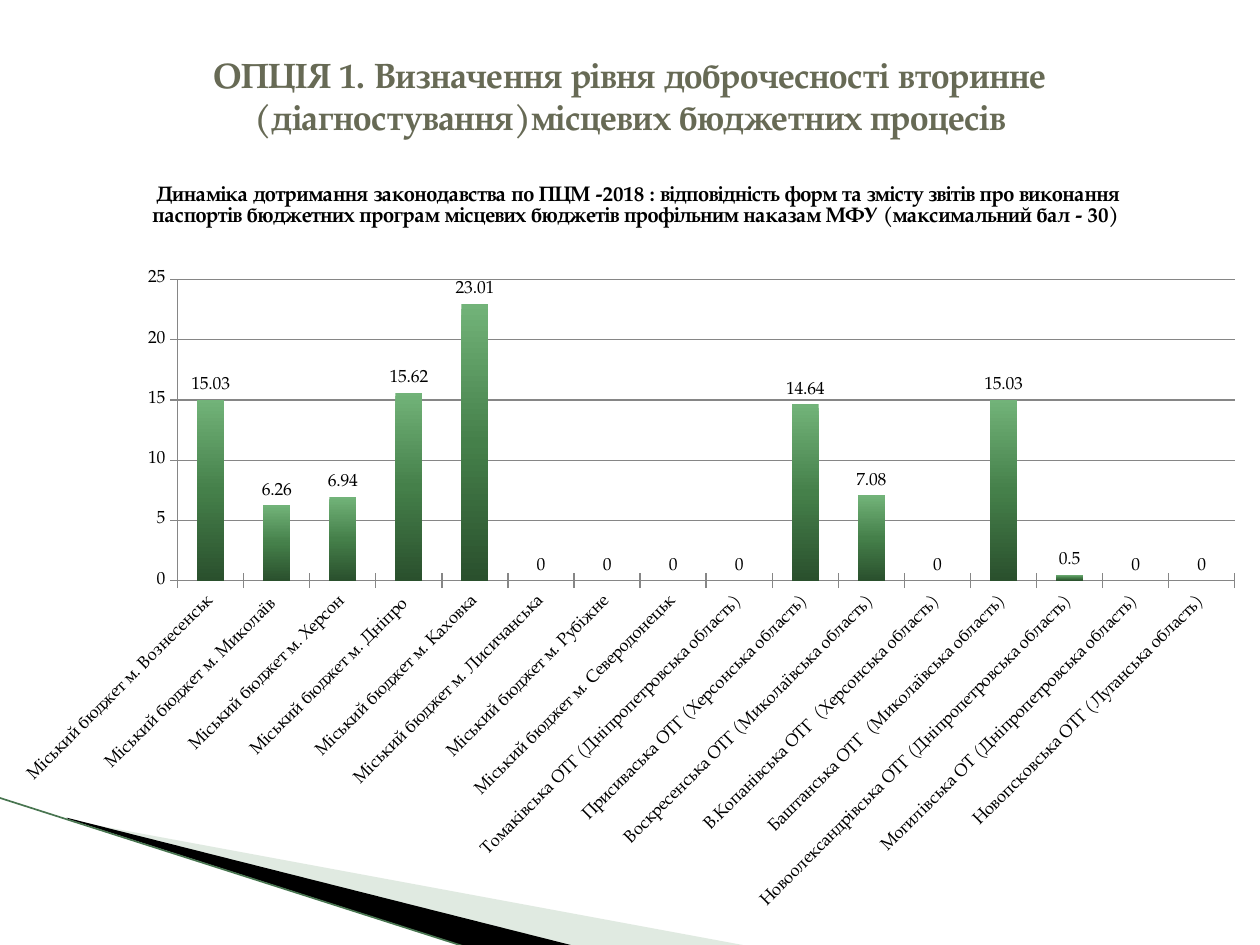
import pptx
import pptx.chart.data
import pptx.dml.color
import pptx.enum.chart
import pptx.enum.shapes
import pptx.enum.text
import pptx.oxml
import pptx.oxml.ns
import pptx.util
from lxml import etree

Inches, Pt = pptx.util.Inches, pptx.util.Pt
RGBColor = pptx.dml.color.RGBColor
qn = pptx.oxml.ns.qn
FONT = "TeX Gyre Pagella"
OLIVE = RGBColor(0x67, 0x6A, 0x55)
BLACK = RGBColor(0, 0, 0)
SAGE = RGBColor(0xB3, 0xCB, 0xB5)
EDGE = RGBColor(0x48, 0x75, 0x50)
GRID = RGBColor(0x86, 0x86, 0x86)
BAR_STOPS = [(0, RGBColor(0x72, 0xB3, 0x79)), (50, RGBColor(0x45, 0x80, 0x4A)),
             (100, RGBColor(0x2A, 0x50, 0x2D))]

TITLE = "ОПЦІЯ 1. Визначення рівня доброчесності вторинне (діагностування)місцевих бюджетних процесів"
CHART_TITLE = ("Динаміка дотримання законодавства по ПЦМ -2018 : відповідність форм та змісту "
               "звітів про виконання паспортів бюджетних програм місцевих бюджетів профільним "
               "наказам МФУ (максимальний бал - 30) ")
SCORES = [
    ("Міський бюджет м. Вознесенськ", 15.03),
    ("Міський бюджет м. Миколаїв ", 6.26),
    ("Міський бюджет м. Херсон", 6.94),
    ("Міський бюджет м. Дніпро ", 15.62),
    ("Міський бюджет м. Каховка", 23.01),
    ("Міський бюджет м. Лисичанська", 0),
    ("Міський бюджет м. Рубіжне", 0),
    ("Міський бюджет м. Северодонецьк", 0),
    ("Томаківська ОТГ (Дніпропетровська область)", 0),
    (" Присиваська ОТГ (Херсонська область)", 14.64),
    (" Воскресенська ОТГ (Миколаївська область)", 7.08),
    ("В.Копанівська ОТГ  (Херсонська область)", 0),
    ("Баштанська ОТГ  (Миколаївська область)", 15.03),
    ("Новоолександрівська ОТГ (Дніпропетровська область)", 0.5),
    ("Могилівська ОТ (Дніпропетровська область)", 0),
    ("Новопсковська ОТГ (Луганська область)", 0),
]
# colour, opacity, frame, corners (the corners reach outside the frame)
WEDGES = [
    (SAGE, 40, (0.78, 5.47, 4.16, 1.58), [(0.55, 6.51), (5.95, 7.51), (4.56, 7.51), (0.55, 6.5)]),
    (BLACK, 100, (-0.06, 6.33, 4.16, 0.92), [(0.53, 6.49), (4.57, 7.51), (3.72, 7.52), (0.54, 6.5)]),
]
CHART_BOX = (0, 1.42, 10, 5.92)


def add_wedge(s, color, opacity, frame, points):
    pts = [(Inches(x), Inches(y)) for x, y in points]
    builder = s.shapes.build_freeform(*pts[0])
    builder.add_line_segments(pts[1:], close=True)
    sp = builder.convert_to_shape()
    set_frame(sp, *map(Inches, frame))
    sp.shadow.inherit = False
    sp.fill.solid()
    sp.fill.fore_color.rgb = color
    sp.line.fill.background()
    if opacity < 100:
        clr = sp.fill._xPr.find(".//" + qn("a:srgbClr"))
        etree.SubElement(clr, qn("a:alpha"), val=str(opacity * 1000))


def set_frame(sp, left, top, width, height):
    """Change the frame of a freeform while its outline stays in place."""
    dx, dy = sp.left - left, sp.top - top
    outline = sp._element.spPr.find(".//" + qn("a:path"))
    outline.set("w", str(width))
    outline.set("h", str(height))
    for pt in outline.iter(qn("a:pt")):
        pt.set("x", str(int(pt.get("x")) + dx))
        pt.set("y", str(int(pt.get("y")) + dy))
    sp.left, sp.top, sp.width, sp.height = left, top, width, height


def add_edge(s):
    line = s.shapes.add_connector(pptx.enum.shapes.MSO_CONNECTOR.STRAIGHT,
                                  Inches(-0.01), Inches(6.33), Inches(3.71), Inches(7.52))
    line.line.color.rgb = EDGE
    line.line.width = Pt(0.95)
    etree.SubElement(line._element.spPr, qn("a:effectLst"))


def add_title(s):
    tf = s.shapes.add_textbox(Inches(0.5), Inches(0.3), Inches(9), Inches(1.25)).text_frame
    tf.word_wrap = True
    tf.vertical_anchor = pptx.enum.text.MSO_ANCHOR.MIDDLE
    tf.margin_bottom = Inches(0.38)
    p = tf.paragraphs[0]
    p.text = TITLE
    p.alignment = pptx.enum.text.PP_ALIGN.CENTER
    set_font(p.font, 20, OLIVE, True)


def set_font(font, size, color=BLACK, bold=False):
    font.name, font.size, font.bold = FONT, Pt(size), bold
    font.color.rgb = color


def set_layout(parent, index, target=None, **inches):
    """Place a chart part, in inches from the chart's corner."""
    for old in parent.findall(qn("c:layout")):
        parent.remove(old)
    layout = etree.Element(qn("c:layout"))
    manual = etree.SubElement(layout, qn("c:manualLayout"))
    if target:
        etree.SubElement(manual, qn("c:layoutTarget"), val=target)
    for mode in ("xMode", "yMode"):
        etree.SubElement(manual, qn("c:" + mode), val="edge")
    for tag, val in inches.items():
        whole = CHART_BOX[2] if tag in "xw" else CHART_BOX[3]
        etree.SubElement(manual, qn("c:" + tag), val=str(val / whole))
    parent.insert(index, layout)


def fill_bars(series):
    fill = series.format.fill
    fill.gradient()
    fill.gradient_angle = 270
    stops = fill._xPr.find(".//" + qn("a:gsLst"))
    for old in list(stops):
        stops.remove(old)
    for pos, color in BAR_STOPS:
        stop = etree.SubElement(stops, qn("a:gs"), pos=str(pos * 1000))
        etree.SubElement(stop, qn("a:srgbClr"), val=str(color))


def add_score_chart(s):
    xl = pptx.enum.chart
    data = pptx.chart.data.CategoryChartData()
    data.categories = [name for name, _ in SCORES]
    data.add_series("Series 1", [score for _, score in SCORES])
    chart = s.shapes.add_chart(xl.XL_CHART_TYPE.COLUMN_CLUSTERED,
                               *map(Inches, CHART_BOX), data).chart
    set_font(chart.font, 10)
    chart.has_legend = False
    p = chart.chart_title.text_frame.paragraphs[0]
    p.text = CHART_TITLE
    set_font(p.font, 12, bold=True)
    set_layout(chart.chart_title._element, 1, x=1.18, y=0)

    plot = chart.plots[0]
    plot.gap_width = 145
    plot.vary_by_categories = False
    plot.has_data_labels = True
    labels = plot.data_labels
    labels.show_value = True
    labels.position = xl.XL_LABEL_POSITION.OUTSIDE_END
    set_font(labels.font, 10)
    fill_bars(plot.series[0])
    set_layout(chart._chartSpace.chart.plotArea, 0, "inner", x=1.41, y=0.8, w=8.39, h=2.39)

    values = chart.value_axis
    values.minimum_scale, values.maximum_scale, values.major_unit = 0, 25, 5
    values.major_gridlines.format.line.color.rgb = GRID
    for axis in (chart.category_axis, values):
        axis.major_tick_mark = xl.XL_TICK_MARK.CROSS
        axis.format.line.color.rgb = GRID
        set_font(axis.tick_labels.font, 10)
    body = chart.category_axis._element.find(qn("c:txPr")).find(qn("a:bodyPr"))
    body.set("rot", str(-45 * 60000))


prs = pptx.Presentation()
prs.slide_width, prs.slide_height = Inches(10), Inches(7.5)
s = prs.slides.add_slide(prs.slide_layouts[6])
for wedge in WEDGES:
    add_wedge(s, *wedge)
add_edge(s)
add_title(s)
add_score_chart(s)
prs.save("out.pptx")
